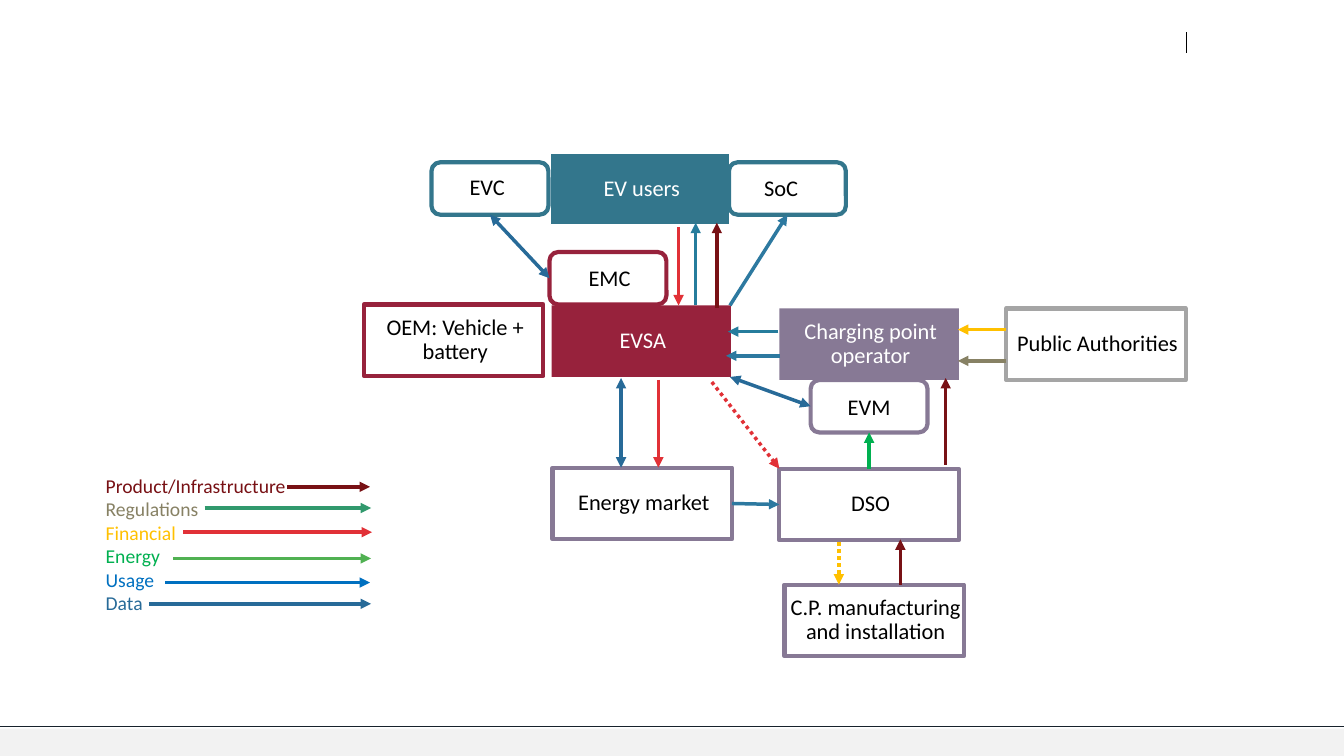
from dataclasses import dataclass
from typing import Optional

from lxml.etree import SubElement
from pptx import Presentation
from pptx.dml.color import RGBColor
from pptx.enum.dml import MSO_LINE
from pptx.enum.shapes import MSO_CONNECTOR, MSO_SHAPE
from pptx.enum.text import MSO_ANCHOR, MSO_AUTO_SIZE, PP_ALIGN
from pptx.oxml.ns import qn
from pptx.util import Inches, Pt

BLACK = RGBColor(0x00, 0x00, 0x00)
WHITE = RGBColor(0xFF, 0xFF, 0xFF)
FOOTER = RGBColor(0xF2, 0xF2, 0xF2)
NAVY = RGBColor(0x16, 0x21, 0x2B)
WINE = RGBColor(0x97, 0x22, 0x3C)
TEAL = RGBColor(0x33, 0x76, 0x8C)
MAUVE = RGBColor(0x87, 0x79, 0x95)
GREY = RGBColor(0xA5, 0xA5, 0xA5)
MAROON = RGBColor(0x78, 0x11, 0x15)
OLIVE = RGBColor(0x87, 0x81, 0x64)
AMBER = RGBColor(0xFF, 0xC0, 0x00)
RED = RGBColor(0xE1, 0x31, 0x37)
GREEN = RGBColor(0x00, 0xB0, 0x50)
LEAF = RGBColor(0x50, 0xB1, 0x52)
SEA = RGBColor(0x31, 0x99, 0x6D)
BLUE = RGBColor(0x00, 0x70, 0xC0)
DATA = RGBColor(0x27, 0x6A, 0x98)
USAGE = RGBColor(0x2D, 0x79, 0xA0)
CYAN = RGBColor(0x26, 0x7C, 0x9C)

FONT = "Calibri"
BOX_W, BOX_H = 1.78, 0.71
CHIP_W, CHIP_H = 1.16, 0.52
TOP, LEFT, BOTTOM, RIGHT = range(4)


@dataclass
class Box:
    name: str
    x: float
    y: float
    line: Optional[RGBColor]
    fill: Optional[RGBColor] = None
    weight: float = 3


@dataclass
class Chip:
    name: str
    x: float
    y: float
    color: RGBColor
    label_x: float
    label_y: float


@dataclass
class Arrow:
    start: tuple
    end: tuple
    color: RGBColor
    both: bool = False
    dotted: bool = False
    begin_at: Optional[tuple] = None
    end_at: Optional[tuple] = None


@dataclass
class LegendRow:
    text: str
    text_color: RGBColor
    arrow_color: RGBColor
    x1: float
    x2: float
    y: float


BOXES = [
    Box("OEM: Vehicle + battery", 3.61, 3.02, WINE),
    Box("DSO", 7.73, 4.65, MAUVE),
    Box("EVSA", 5.47, 3.03, None, WINE),
    Box("EV users", 5.46, 1.52, WHITE, TEAL, 1),
    Box("Public Authorities", 9.98, 3.06, GREY),
    Box("Charging point operator", 7.73, 3.06, None, MAUVE),
    Box("C.P. manufacturing and installation", 7.78, 5.8, MAUVE),
    Box("Energy market", 5.48, 4.64, MAUVE),
]
CHIPS = [
    Chip("EMC", 5.45, 2.5, WINE, 5.74, 2.57),
    Chip("EVC", 4.28, 1.61, TEAL, 4.56, 1.67),
    Chip("SoC", 7.23, 1.61, TEAL, 7.48, 1.68),
    Chip("EVM", 8.04, 3.77, MAUVE, 8.31, 3.85),
]
ARROWS = [
    Arrow((8.61, 4.65), (8.62, 4.29), GREEN, begin_at=("DSO", TOP), end_at=("EVM", BOTTOM)),
    Arrow((8.32, 5.38), (8.32, 5.8), AMBER, dotted=True),
    Arrow((7.06, 3.79), (7.73, 4.65), RED, dotted=True),
    Arrow((7.72, 3.29), (7.22, 3.29), CYAN),
    Arrow((6.9, 3.03), (6.9, 2.21), CYAN),
    Arrow((7.74, 3.53), (7.2, 3.53), USAGE),
    Arrow((9.98, 3.58), (9.5, 3.58), OLIVE),
    Arrow((7.26, 4.99), (7.73, 5), USAGE, begin_at=("Energy market", RIGHT), end_at=("DSO", LEFT)),
    Arrow((6.53, 3.77), (6.53, 4.64), RED),
    Arrow((8.93, 5.8), (8.93, 5.35), MAROON),
    Arrow((7.24, 3.03), (7.81, 2.13), USAGE, end_at=("SoC", BOTTOM)),
    Arrow((6.73, 2.25), (6.73, 3.03), RED),
    Arrow((9.98, 3.27), (9.5, 3.27), AMBER),
    Arrow((4.86, 2.13), (5.45, 2.75), DATA, both=True, begin_at=("EVC", BOTTOM), end_at=("EMC", LEFT)),
    Arrow((7.11, 3.06), (7.11, 2.21), MAROON),
    Arrow((6.16, 4.64), (6.16, 3.75), DATA, both=True),
    Arrow((7.24, 3.74), (8.04, 4.03), DATA, both=True, end_at=("EVM", LEFT)),
    Arrow((9.38, 4.61), (9.38, 3.75), MAROON),
]
LEGEND = [
    LegendRow("Product/Infrastructure", MAROON, MAROON, 2.85, 3.67, 4.83),
    LegendRow("Regulations", OLIVE, SEA, 2.03, 3.68, 5.04),
    LegendRow("Financial", AMBER, RED, 1.82, 3.69, 5.28),
    LegendRow("Energy", GREEN, LEAF, 1.72, 3.68, 5.54),
    LegendRow("Usage", BLUE, BLUE, 1.64, 3.67, 5.78),
    LegendRow("Data", DATA, DATA, 1.48, 3.68, 5.99),
]


def add_run(p, text: str, size: float, color: RGBColor) -> None:
    r = p.add_run()
    r.text = text
    r.font.name = FONT
    r.font.size = Pt(size)
    r.font.color.rgb = color


def add_block(s, kind, x: float, y: float, w: float, h: float, fill=None, line=None, weight: float = 3):
    sp = s.shapes.add_shape(kind, Inches(x), Inches(y), Inches(w), Inches(h))
    sp.shadow.inherit = False
    if fill is None:
        sp.fill.background()
    else:
        sp.fill.solid()
        sp.fill.fore_color.rgb = fill
    if line is None:
        sp.line.fill.background()
    else:
        sp.line.color.rgb = line
        sp.line.width = Pt(weight)
    return sp


def add_box(s, box: Box):
    sp = add_block(s, MSO_SHAPE.RECTANGLE, box.x, box.y, BOX_W, BOX_H, box.fill, box.line, box.weight)
    tf = sp.text_frame
    tf.word_wrap = True
    tf.vertical_anchor = MSO_ANCHOR.MIDDLE
    tf.margin_left, tf.margin_right = Inches(0.05), Inches(0.02)
    tf.margin_top = tf.margin_bottom = Inches(0.04)
    p = tf.paragraphs[0]
    p.alignment = PP_ALIGN.CENTER
    p.line_spacing = 0.9
    p.space_after = Pt(7)
    add_run(p, box.name, 16, WHITE if box.fill else BLACK)
    return sp


def add_text(s, x: float, y: float, w: float, h: float, size: float, lines: list) -> None:
    tf = s.shapes.add_textbox(Inches(x), Inches(y), Inches(w), Inches(h)).text_frame
    tf.word_wrap = True
    tf.auto_size = MSO_AUTO_SIZE.SHAPE_TO_FIT_TEXT
    for i, (text, color) in enumerate(lines):
        p = tf.add_paragraph() if i else tf.paragraphs[0]
        add_run(p, text, size, color)


def add_chip(s, chip: Chip):
    sp = add_block(s, MSO_SHAPE.ROUNDED_RECTANGLE, chip.x, chip.y, CHIP_W, CHIP_H, line=chip.color)
    add_text(s, chip.label_x, chip.label_y, 0.77, 0.37, 16, [(chip.name, BLACK)])
    return sp


def add_line(s, start: tuple, end: tuple, color: RGBColor, weight: float = 1):
    cx = s.shapes.add_connector(MSO_CONNECTOR.STRAIGHT, *(Inches(v) for v in start + end))
    cx.line.color.rgb = color
    cx.line.width = Pt(weight)
    SubElement(cx._element.spPr, qn("a:effectLst"))
    return cx


def add_arrow(s, arrow: Arrow, nodes: dict) -> None:
    cx = add_line(s, arrow.start, arrow.end, arrow.color, 2.5)
    if arrow.dotted:
        cx.line.dash_style = MSO_LINE.ROUND_DOT
    for tag in ("a:headEnd", "a:tailEnd") if arrow.both else ("a:tailEnd",):
        SubElement(cx.line._get_or_add_ln(), qn(tag), type="triangle")
    if arrow.begin_at:
        cx.begin_connect(nodes[arrow.begin_at[0]], arrow.begin_at[1])
    if arrow.end_at:
        cx.end_connect(nodes[arrow.end_at[0]], arrow.end_at[1])


def main() -> None:
    prs = Presentation()
    prs.slide_width, prs.slide_height = Inches(13.33), Inches(7.5)
    s = prs.slides.add_slide(prs.slide_layouts[6])
    add_block(s, MSO_SHAPE.RECTANGLE, 0, 7.23, 13.33, 0.27, FOOTER)
    add_line(s, (0, 7.21), (13.33, 7.21), NAVY)
    add_line(s, (11.77, 0.32), (11.77, 0.53), BLACK)
    nodes = {box.name: add_box(s, box) for box in BOXES}
    nodes.update({chip.name: add_chip(s, chip) for chip in CHIPS})
    add_text(s, 0.95, 4.65, 2, 1.51, 14, [(row.text, row.text_color) for row in LEGEND])
    keys = [Arrow((row.x1, row.y), (row.x2, row.y), row.arrow_color) for row in LEGEND]
    for arrow in ARROWS + keys:
        add_arrow(s, arrow, nodes)
    prs.save("out.pptx")


if __name__ == "__main__":
    main()
